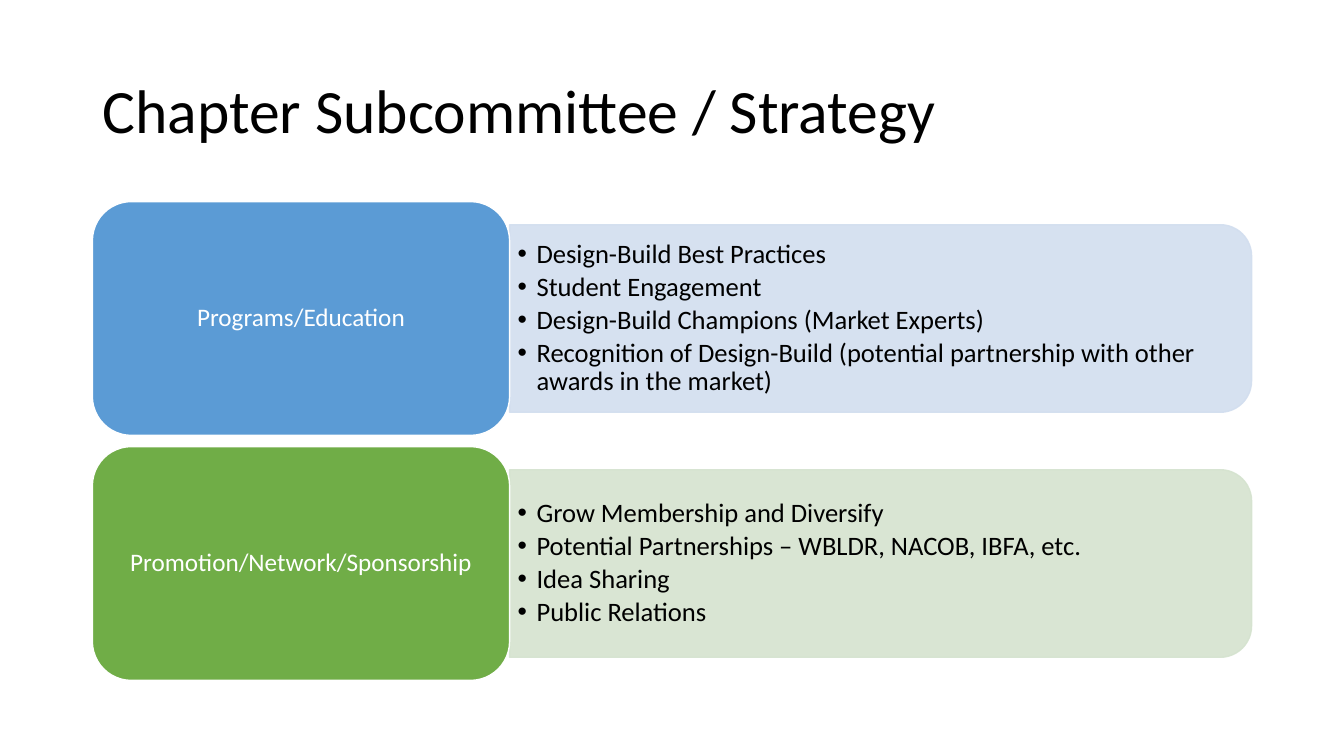
from dataclasses import dataclass
from pptx import Presentation
from pptx.dml.color import RGBColor as RGB
from pptx.enum.shapes import MSO_SHAPE as Shape
from pptx.enum.text import MSO_ANCHOR as Anchor, PP_ALIGN as Align
from pptx.oxml.ns import qn
from pptx.util import Pt
from lxml.etree import SubElement as Sub

TITLE = "Chapter Subcommittee / Strategy"
# name, card colour, panel colour, points
GROUPS = [
    ("Programs/Education", "5B9BD5", "D2DEEF", [
        "Design-Build Best Practices",
        "Student Engagement",
        "Design-Build Champions (Market Experts)",
        "Recognition of Design-Build (potential partnership with other "
        "awards in the market)",
    ]),
    ("Promotion/Network/Sponsorship", "70AD47", "D5E3CF", [
        "Grow Membership and Diversify",
        "Potential Partnerships – WBLDR, NACOB, IBFA, etc.",
        "Idea Sharing",
        "Public Relations",
    ]),
]


@dataclass(frozen=True)
class Theme:
    font: str = "Calibri"
    dark: str = "000000"
    light: str = "FFFFFF"
    title: int = 44
    card: int = 18
    point: float = 19
    alpha: int = 90


LOOK = Theme()
LEFT, TOP, PITCH = 66, 144, 175
CARD_W, CARD_H = 298, 167
PANEL_W, PANEL_H = 530, 134
TEXT_W, TEXT_H = 523.4, 121
INDENT = 13.5


def write(para, text, size, color):
    para.line_spacing = 0.9
    run = para.add_run()
    run.text = text
    run.font.name = LOOK.font
    run.font.size = Pt(size)
    run.font.color.rgb = RGB.from_string(color)


def frame(shape, side, edge):
    """Set wrapping, middle anchor and insets; return the text frame."""
    body = shape.text_frame
    body.word_wrap = True
    body.vertical_anchor = Anchor.MIDDLE
    body.margin_left = body.margin_right = Pt(side)
    body.margin_top = body.margin_bottom = Pt(edge)
    return body


def block(slide, kind, box, fill, line):
    shape = slide.shapes.add_shape(kind, *map(Pt, box))
    shape.shadow.inherit = False
    shape.fill.solid()
    shape.fill.fore_color.rgb = RGB.from_string(fill)
    shape.line.color.rgb = RGB.from_string(line)
    shape.line.width = Pt(1)
    return shape


def add_panel(slide, left, mid, color):
    """Draw a panel rounded on its right side, by turning a tall shape."""
    box = (left + (PANEL_W - PANEL_H) / 2, mid - PANEL_W / 2, PANEL_H, PANEL_W)
    panel = block(slide, Shape.ROUND_2_SAME_RECTANGLE, box, color, color)
    panel.rotation = 90
    for tint in panel.element.spPr.iter(qn("a:srgbClr")):
        Sub(tint, qn("a:alpha"), val=str(LOOK.alpha * 1000))


def add_points(slide, left, mid, points):
    box = (left, mid - TEXT_H / 2, TEXT_W, TEXT_H)
    body = frame(slide.shapes.add_textbox(*map(Pt, box)), 5.8, 2.9)
    for i, text in enumerate(points):
        para = body.add_paragraph() if i else body.paragraphs[0]
        para.level = 1
        para.space_after = Pt(3)
        write(para, text, LOOK.point, LOOK.dark)
        props = para._p.get_or_add_pPr()
        props.set("marL", str(Pt(INDENT)))
        props.set("indent", str(Pt(-INDENT)))
        Sub(props, qn("a:buFont"), typeface="Arial")
        Sub(props, qn("a:buChar"), char="•")


def add_card(slide, top, name, color):
    box = (LEFT, top, CARD_W, CARD_H)
    card = block(slide, Shape.ROUNDED_RECTANGLE, box, color, LOOK.light)
    para = frame(card, 5, 2.9).paragraphs[0]
    para.alignment = Align.CENTER
    write(para, name, LOOK.card, LOOK.light)


def main():
    deck = Presentation()
    deck.slide_width, deck.slide_height = Pt(960), Pt(540)
    slide = deck.slides.add_slide(deck.slide_layouts[5])

    head = slide.shapes.title
    head.left, head.top, head.width, head.height = map(Pt, (66, 28.8, 828, 104.4))
    para = frame(head, 7.2, 3.6).paragraphs[0]
    para.alignment = Align.LEFT
    write(para, TITLE, LOOK.title, LOOK.dark)

    for row, (name, color, pale, points) in enumerate(GROUPS):
        top = TOP + row * PITCH
        mid = top + CARD_H / 2
        add_panel(slide, LEFT + CARD_W, mid, pale)
        add_points(slide, LEFT + CARD_W, mid, points)
        add_card(slide, top, name, color)

    deck.save("out.pptx")


if __name__ == "__main__":
    main()
